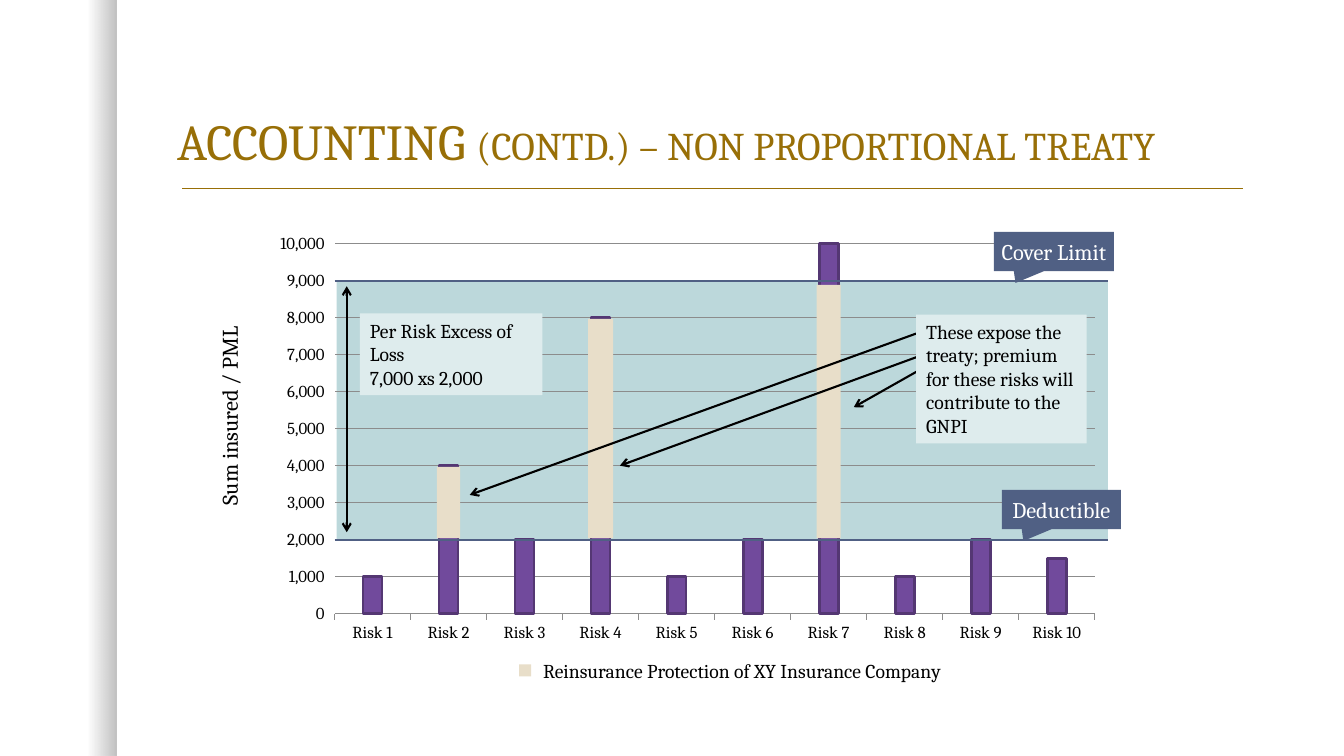
from dataclasses import dataclass

from lxml import etree
from pptx import Presentation
from pptx.chart.data import CategoryChartData
from pptx.dml.color import RGBColor
from pptx.enum.chart import XL_CHART_TYPE, XL_TICK_MARK
from pptx.enum.shapes import MSO_CONNECTOR, MSO_SHAPE
from pptx.enum.text import MSO_ANCHOR, MSO_AUTO_SIZE, PP_ALIGN
from pptx.oxml import parse_xml
from pptx.oxml.ns import nsdecls, qn
from pptx.util import Emu, Inches, Pt

RECT = MSO_SHAPE.RECTANGLE
CALLOUT = MSO_SHAPE.RECTANGULAR_CALLOUT
STRAIGHT = MSO_CONNECTOR.STRAIGHT
COLUMN = XL_CHART_TYPE.COLUMN_CLUSTERED
OUT = XL_TICK_MARK.OUTSIDE
TOP, MID, LOW = MSO_ANCHOR.TOP, MSO_ANCHOR.MIDDLE, MSO_ANCHOR.BOTTOM
LEFT, CENTER = PP_ALIGN.LEFT, PP_ALIGN.CENTER
GROW = MSO_AUTO_SIZE.SHAPE_TO_FIT_TEXT

COLS, ROWS = 40, 22.5
WIDE, HIGH = Inches(13.333), Inches(7.5)


@dataclass(frozen=True)
class Theme:
    font: str = "Cambria"
    gold: str = "986F07"
    band: str = "BCD8DB"
    note: str = "DEECED"
    sand: str = "E8DEC9"
    navy: str = "506084"
    bar: str = "714A9C"
    edge: str = "543773"
    grid: str = "8C8C8C"
    black: str = "000000"
    white: str = "FFFFFF"
    head: int = 36
    sub: int = 28
    label: int = 16
    body: int = 14
    axis: int = 12


@dataclass(frozen=True)
class Box:
    x: float
    y: float
    w: float
    h: float

    def size(self) -> tuple[Emu, Emu, Emu, Emu]:
        return across(self.x), down(self.y), across(self.w), down(self.h)


@dataclass(frozen=True)
class Line:
    x1: float
    y1: float
    x2: float
    y2: float
    color: str
    width: float = 1.5
    ends: tuple[str, ...] = ()


@dataclass(frozen=True)
class Note:
    box: Box
    lines: tuple[str, ...]


@dataclass(frozen=True)
class Tag:
    box: Box
    text: str


@dataclass(frozen=True)
class Cover:
    risk: int
    width: float
    gap: float


THEME = Theme()
FRAME = Box(6.06, 6.3, 27.63, 14.07)
SHARE = Box(0.141, 0.068, 0.819, 0.783)
PLOT = Box(FRAME.x + SHARE.x * FRAME.w, FRAME.y + SHARE.y * FRAME.h,
           SHARE.w * FRAME.w, SHARE.h * FRAME.h)
SUMS = (1000, 4000, 2000, 8000, 1000, 2000, 10000, 1000, 2000, 1500)
PEAK, STEP, LIMIT, BASE = 10000, 1000, 9000, 2000
COVERS = (Cover(2, 0.69, 0.03), Cover(4, 0.75, 0.03), Cover(7, 0.72, 0.12))
NOTES = (
    Note(Box(10.71, 9.33, 5.43, 2.43), ("Per Risk Excess of Loss", "7,000 xs 2,000")),
    Note(Box(27.27, 9.36, 5.07, 3.84), (
        "These expose the treaty; premium for these risks will contribute to the GNPI",)),
)
TAGS = (
    Tag(Box(29.82, 14.58, 3.54, 1.17), "Deductible"),
    Tag(Box(29.58, 6.9, 3.57, 1.17), "Cover Limit"),
)


def across(cols: float) -> Emu:
    return Emu(round(WIDE * cols / COLS))


def down(rows: float) -> Emu:
    return Emu(round(HIGH * rows / ROWS))


def level(value: float) -> float:
    return PLOT.y + PLOT.h * (1 - value / PEAK)


def rgb(color: str) -> RGBColor:
    return RGBColor.from_string(color)


def style(font, size: int, color: str) -> None:
    font.name, font.size = THEME.font, Pt(size)
    font.color.rgb = rgb(color)


def write(shape, lines: tuple[str, ...], size: int, color: str = THEME.black,
          align=LEFT, anchor=TOP, wrap: bool = True) -> None:
    frame = shape.text_frame
    frame.word_wrap, frame.vertical_anchor = wrap, anchor
    frame.text = "\n".join(lines)
    for para in frame.paragraphs:
        para.alignment = align
        style(para.font, size, color)


def draw_shape(slide, box: Box, color: str, kind=RECT):
    shape = slide.shapes.add_shape(kind, *box.size())
    shape.shadow.inherit = False
    shape.fill.solid()
    shape.fill.fore_color.rgb = rgb(color)
    shape.line.fill.background()
    return shape


def draw_line(slide, line: Line) -> None:
    link = slide.shapes.add_connector(
        STRAIGHT, across(line.x1), down(line.y1), across(line.x2), down(line.y2))
    link.line.color.rgb = rgb(line.color)
    link.line.width = Pt(line.width)
    for end in line.ends:
        etree.SubElement(link.line._get_or_add_ln(), qn(f"a:{end}"), type="arrow")
    etree.SubElement(link._element.spPr, qn("a:effectLst"))


def draw_edge(slide) -> None:
    strip = draw_shape(slide, Box(0, 0, 3.48, ROWS), THEME.white)
    strip.fill.gradient()
    strip.fill.gradient_angle = 0
    for stop, (place, alpha) in zip(strip.fill.gradient_stops, ((0.75, 0), (1, 25000))):
        stop.position = place
        stop.color.rgb = rgb(THEME.black)
        tint = stop._gs.find(qn("a:srgbClr"))
        etree.SubElement(tint, qn("a:alpha"), val=str(alpha))


def draw_title(slide) -> None:
    frame = slide.shapes.add_textbox(*Box(4.98, 1.26, 32.25, 3.99).size()).text_frame
    frame.word_wrap, frame.vertical_anchor = True, LOW
    para = frame.paragraphs[0]
    para.line_spacing = 0.9
    for text, size in (("ACCOUNTING ", THEME.head),
                       ("(CONTD.) – NON PROPORTIONAL TREATY", THEME.sub)):
        run = para.add_run()
        run.text = text
        style(run.font, size, THEME.gold)


def draw_chart(slide) -> None:
    data = CategoryChartData()
    data.categories = [f"Risk {n}" for n in range(1, len(SUMS) + 1)]
    data.add_series("Series 1", SUMS)
    chart = slide.shapes.add_chart(COLUMN, *FRAME.size(), data).chart
    chart.has_title = chart.has_legend = False
    style(chart.font, THEME.axis, THEME.black)
    plot = chart.plots[0]
    plot.gap_width, plot.overlap, plot.vary_by_categories = 300, -100, False
    bars = plot.series[0].format
    bars.fill.solid()
    bars.fill.fore_color.rgb = rgb(THEME.bar)
    bars.line.color.rgb = rgb(THEME.edge)
    bars.line.width = Pt(2)
    risks, sums = chart.category_axis, chart.value_axis
    for axis in (risks, sums):
        axis.major_tick_mark = OUT
        style(axis.tick_labels.font, THEME.axis, THEME.black)
    risks.format.line.color.rgb = rgb(THEME.grid)
    sums.format.line.fill.background()
    sums.minimum_scale, sums.maximum_scale, sums.major_unit = 0, PEAK, STEP
    sums.tick_labels.number_format = "#,##0"
    sums.tick_labels.number_format_is_linked = False
    sums.major_gridlines.format.line.color.rgb = rgb(THEME.grid)
    area = chart._chartSpace.chart.plotArea
    for old in area.findall(qn("c:layout")):
        area.remove(old)
    parts = (("layoutTarget", "inner"), ("xMode", "edge"), ("yMode", "edge"),
             ("x", SHARE.x), ("y", SHARE.y), ("w", SHARE.w), ("h", SHARE.h))
    inner = "".join(f'<c:{name} val="{value}"/>' for name, value in parts)
    area.insert(0, parse_xml(
        f'<c:layout {nsdecls("c")}><c:manualLayout>{inner}</c:manualLayout></c:layout>'))


def draw_words(slide) -> None:
    side = slide.shapes.add_textbox(*Box(3.66, 11.61, 6.33, 1.11).size())
    side.rotation = 270
    write(side, ("Sum insured / PML",), THEME.label, wrap=False)
    key = slide.shapes.add_textbox(*Box(15.87, 19.47, 16.5, 1.02).size())
    write(key, ("Reinsurance Protection of XY Insurance Company",), THEME.body)
    draw_shape(slide, Box(15.45, 19.77, 0.36, 0.36), THEME.sand)


def draw_cover(slide, cover: Cover) -> None:
    mid = PLOT.x + PLOT.w * (cover.risk - 0.5) / len(SUMS)
    top = level(min(SUMS[cover.risk - 1], LIMIT)) + cover.gap
    draw_shape(slide, Box(mid - cover.width / 2, top, cover.width,
                          level(BASE) - 0.05 - top), THEME.sand)


def draw_note(slide, note: Note) -> None:
    shape = draw_shape(slide, note.box, THEME.note)
    write(shape, note.lines, THEME.body)
    shape.text_frame.auto_size = GROW


def draw_tag(slide, tag: Tag) -> None:
    shape = draw_shape(slide, tag.box, THEME.navy, CALLOUT)
    shape.adjustments[0], shape.adjustments[1] = -0.32, 0.8
    write(shape, (tag.text,), THEME.label, THEME.white, CENTER, MID, False)
    frame = shape.text_frame
    frame.margin_left = frame.margin_right = Inches(0.08)
    frame.margin_top = frame.margin_bottom = Inches(0.08)


def main() -> None:
    deck = Presentation()
    deck.slide_width, deck.slide_height = WIDE, HIGH
    slide = deck.slides.add_slide(deck.slide_layouts[6])
    draw_edge(slide)
    draw_line(slide, Line(5.43, 5.61, 36.99, 5.61, THEME.gold, 1))
    draw_title(slide)
    draw_shape(slide, Box(10.02, level(LIMIT), 22.95, level(BASE) - level(LIMIT)), THEME.band)
    draw_chart(slide)
    draw_words(slide)
    draw_line(slide, Line(10.32, 8.52, 10.32, 15.84, THEME.black, ends=("headEnd", "tailEnd")))
    for cover in COVERS:
        draw_cover(slide, cover)
    for value in (BASE, LIMIT):
        draw_line(slide, Line(PLOT.x, level(value), 32.97, level(value), THEME.navy))
    for x1, y1, x2, y2 in ((27.51, 9.84, 13.98, 14.73), (27.63, 10.5, 18.45, 13.86),
                           (27.69, 10.83, 25.41, 12.12)):
        draw_line(slide, Line(x1, y1, x2, y2, THEME.black, ends=("tailEnd",)))
    for note in NOTES:
        draw_note(slide, note)
    for tag in TAGS:
        draw_tag(slide, tag)
    deck.save("out.pptx")


if __name__ == "__main__":
    main()
